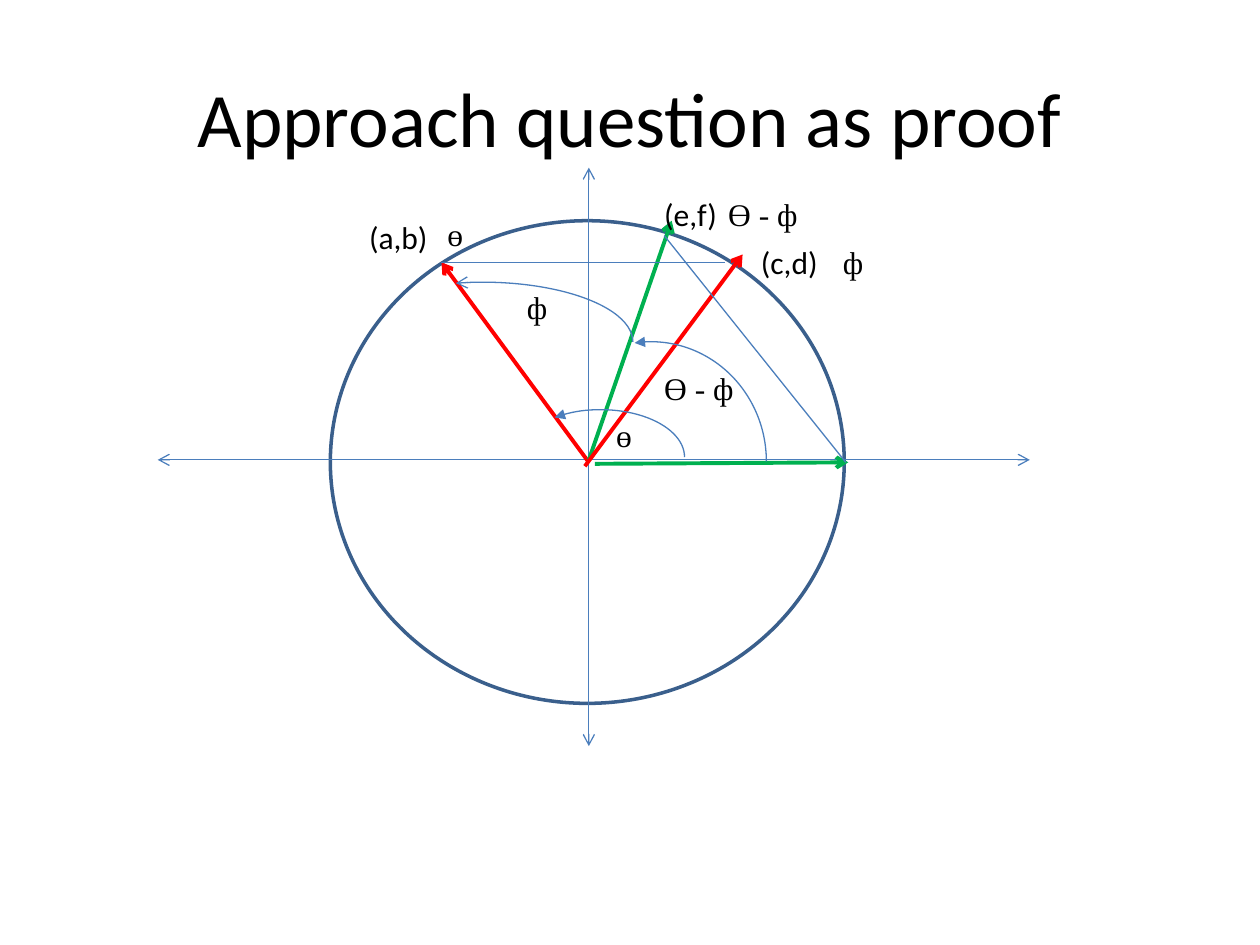
from pptx import Presentation
from pptx.dml.color import RGBColor
from pptx.enum.shapes import MSO_CONNECTOR, MSO_SHAPE
from pptx.enum.text import MSO_ANCHOR, PP_ALIGN
from pptx.oxml.ns import qn
from pptx.util import Cm, Pt
from lxml.etree import SubElement

BLUE, RIM, RED, GREEN, BLACK = "4B7EBC", "3A5F8C", "FF0000", "00B050", "000000"
SANS, SERIF = "Calibri", "Times New Roman"


def rgb(value):
    return RGBColor.from_string(value)


def style_line(s, color, width, head=None, tail=None):
    s.line.color.rgb = rgb(color)
    s.line.width = Pt(width)
    ln = s.line._get_or_add_ln()
    for tag, kind in (("a:headEnd", head), ("a:tailEnd", tail)):
        if kind:
            SubElement(ln, qn(tag), type=kind)


def add_line(slide, box, start, end, color=BLUE, width=0.75, head=None, tail=None):
    left, top = box[:2]
    s = slide.shapes.add_connector(
        MSO_CONNECTOR.STRAIGHT,
        Cm(left + start[0]), Cm(top + start[1]),
        Cm(left + end[0]), Cm(top + end[1]))
    style_line(s, color, width, head, tail)
    SubElement(s._element.spPr, qn("a:effectLst"))


def add_outline(slide, box, kind, x, y, w, h, color=BLUE, width=0.75, head=None):
    s = slide.shapes.add_shape(kind, Cm(box[0] + x), Cm(box[1] + y), Cm(w), Cm(h))
    s.shadow.inherit = False
    s.fill.background()
    style_line(s, color, width, head)
    return s


def add_text(slide, box, text, size, font):
    s = slide.shapes.add_textbox(*(Cm(v) for v in box))
    tf = s.text_frame
    tf.word_wrap = True
    tf.text = text
    f = tf.paragraphs[0].runs[0].font
    f.size, f.name = Pt(size), font
    f.color.rgb = rgb(BLACK)
    return tf


def add_title(slide, box):
    tf = add_text(slide, box, "Approach question as proof", 44, SANS)
    tf.vertical_anchor = MSO_ANCHOR.MIDDLE
    tf.paragraphs[0].alignment = PP_ALIGN.CENTER


def add_circle_diagram(slide, box):
    left, top, width, height = box
    cx, cy = 8.69, 5.89
    point_ab = (5.72, 1.91)

    add_outline(slide, box, MSO_SHAPE.OVAL, 3.48, 1.07, 10.36, 9.73, RIM, 2)
    for start, end in (((0, cy), (width, cy)), ((cx, 0), (cx, height))):
        add_line(slide, box, start, end, head="arrow", tail="arrow")

    vectors = [
        ((cx, 5.94), point_ab, RED),
        ((cx, cy), (10.36, 1.07), GREEN),
        ((8.61, 6.02), (11.79, 1.75), RED),
        ((8.81, 5.97), (13.92, 5.94), GREEN),
    ]
    for start, end, color in vectors:
        add_line(slide, box, start, end, color, 2.25, tail="arrow")

    arcs = [
        (7.62, 3.51, 4.65, 4.83, 157.27, "triangle"),
        (7.24, 4.88, 3.38, 1.91, 132.42, "triangle"),
        (3.53, 2.31, 6.05, 2.41, 147.23, "arrow"),
    ]
    for x, y, w, h, angle, head in arcs:
        s = add_outline(slide, box, MSO_SHAPE.ARC, x, y, w, h, head=head)
        s.adjustments[0] = angle
        s.adjustments[1] = 0

    chords = [(point_ab, (11.43, 1.91)), ((10.21, 1.37), (13.87, 5.94))]
    for start, end in chords:
        add_line(slide, box, start, end)

    labels = [
        ("(a,b)", 4.01, 0.89, 2.54, SANS),
        ("Ө - ф", 9.96, 3.94, 2.74, SERIF),
        ("(e,f)", 9.96, 0.43, 2.97, SANS),
        ("ө", 8.99, 4.88, 2.11, SERIF),
        ("ф", 7.19, 2.31, 1.8, SERIF),
        ("(c,d)", 11.91, 1.4, 3.81, SANS),
        ("ф", 13.56, 1.4, 3, SERIF),
        ("Ө - ф", 11.25, 0.43, 3.81, SERIF),
        ("ө", 5.59, 0.84, 3.38, SERIF),
    ]
    for text, x, y, w, font in labels:
        add_text(slide, (left + x, top + y, w, 1.03), text, 18, font)


def main():
    prs = Presentation()
    prs.slide_width, prs.slide_height = Cm(25.4), Cm(19.05)
    slide = prs.slides.add_slide(prs.slide_layouts[6])
    add_title(slide, (1.27, 0.76, 22.86, 3.18))
    add_circle_diagram(slide, (3.18, 3.38, 17.58, 11.66))
    prs.save("out.pptx")


if __name__ == "__main__":
    main()
